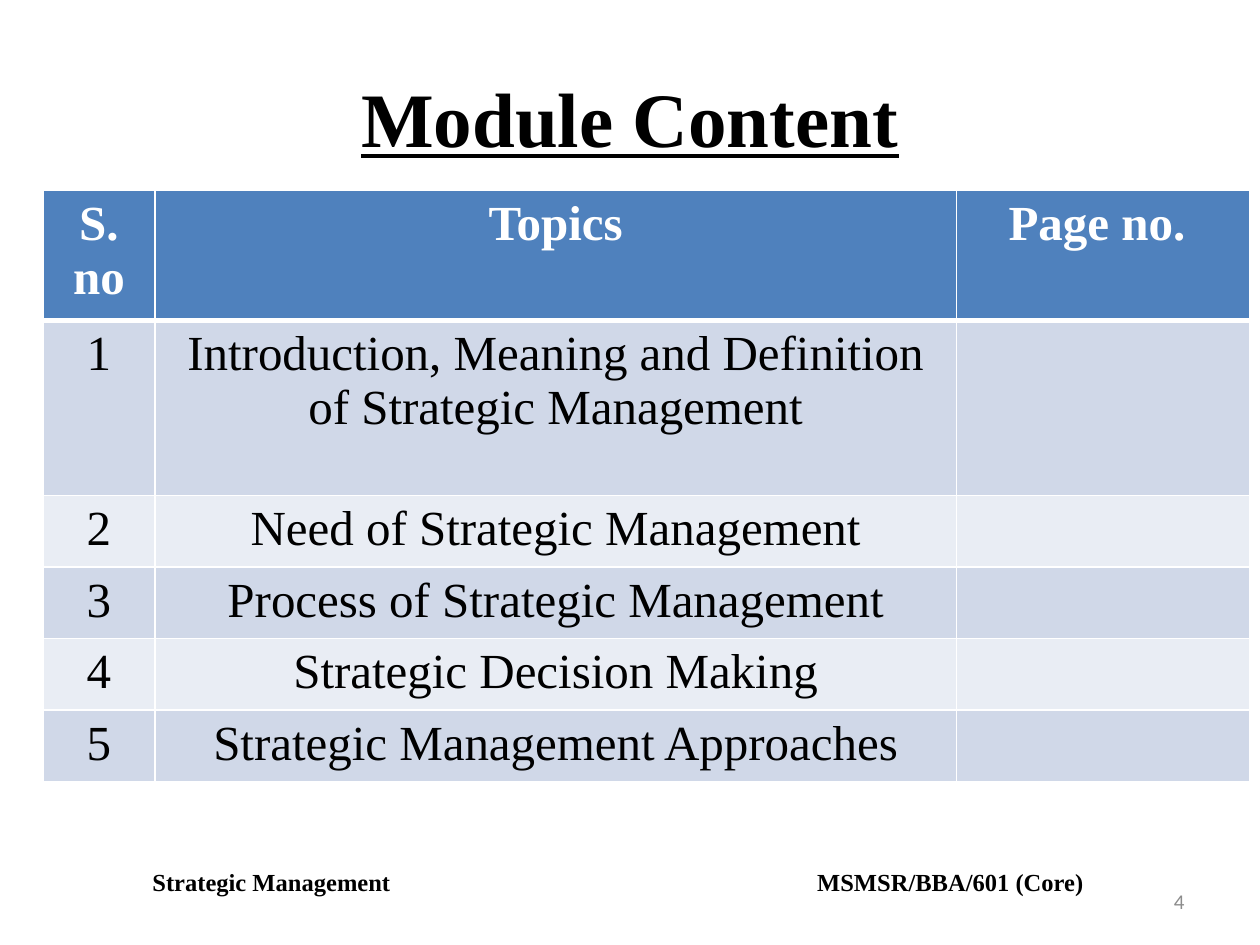
"""Build the module content slide: title, topics table, footer and page number."""
from lxml import etree
from pptx import Presentation, util as u
from pptx.dml.color import RGBColor
from pptx.enum import text
from pptx.oxml.ns import qn

COLORS = {"black": "000000", "white": "FFFFFF", "header": "4F81BD",
          "odd": "D0D8E8", "even": "E9EDF4", "grey": "8C8C8C"}
SERIF = "Times New Roman"
TOPICS = ["Introduction, Meaning and Definition of Strategic Management",
          "Need of Strategic Management",
          "Process of Strategic Management",
          "Strategic Decision Making",
          "Strategic Management Approaches"]
ROWS = [("S. no", "Topics", "Page no. ")]
ROWS += [(str(number), topic, "") for number, topic in enumerate(TOPICS, 1)]
WIDTHS = [0.89, 6.36, 2.33]
HEIGHTS = [0.95, 1.39] + [0.53] * 4
TITLE = {"size": u.Pt(44), "name": SERIF, "bold": True, "underline": True}
HEADER = {"size": u.Pt(28), "name": SERIF, "bold": True}
BODY = {**HEADER, "bold": False}
FOOTER = {"size": u.Pt(14), "name": SERIF, "bold": True}
NUMBER = {"size": u.Pt(12), "name": "Calibri"}


def write(frame, words, style, color, align):
    para = frame.paragraphs[0]
    para.alignment = align
    span = para.add_run()
    span.text = words
    for name, value in style.items():
        setattr(span.font, name, value)
    span.font.color.rgb = RGBColor.from_string(COLORS[color])
    return para


def add_text(page, place, words, style, color, align, anchor=text.MSO_ANCHOR.MIDDLE):
    frame = page.shapes.add_textbox(*map(u.Inches, place)).text_frame
    frame.word_wrap = True
    frame.vertical_anchor = anchor
    return frame, write(frame, words, style, color, align)


def add_borders(cell, widths):
    properties = cell._tc.get_or_add_tcPr()
    for side, points in zip("LRTB", widths):
        line = etree.SubElement(properties, qn(f"a:ln{side}"), w=str(u.Pt(points)))
        fill = etree.SubElement(line, qn("a:solidFill"))
        etree.SubElement(fill, qn("a:srgbClr"), val=COLORS["white"])


def add_topics(page):
    place = (0.34, 1.51, sum(WIDTHS), sum(HEIGHTS))
    table = page.shapes.add_table(len(ROWS), len(WIDTHS), *map(u.Inches, place)).table
    for column, width in zip(table.columns, WIDTHS):
        column.width = u.Inches(width)
    for r, (row, height) in enumerate(zip(ROWS, HEIGHTS)):
        table.rows[r].height = u.Inches(height)
        shade = "header" if r == 0 else "odd" if r % 2 else "even"
        style, color = (HEADER, "white") if r == 0 else (BODY, "black")
        for c, words in enumerate(row):
            cell = table.cell(r, c)
            add_borders(cell, (1, 1, 3 if r == 1 else 1, 3 if r == 0 else 1))
            cell.fill.solid()
            cell.fill.fore_color.rgb = RGBColor.from_string(COLORS[shade])
            if words:
                write(cell.text_frame, words, style, color, text.PP_ALIGN.CENTER)


def add_footer(page):
    frame, para = add_text(page, (0.42, 6.83, 9, 0.34),
                           "Strategic Management\tMSMSR/BBA/601 (Core)", FOOTER,
                           "black", text.PP_ALIGN.LEFT, text.MSO_ANCHOR.TOP)
    frame.margin_left = u.Inches(0.79)
    tabs = etree.SubElement(para._p.get_or_add_pPr(), qn("a:tabLst"))
    etree.SubElement(tabs, qn("a:tab"), pos=str(u.Inches(7.39)), algn="r")


def main():
    deck = Presentation()
    deck.slide_width, deck.slide_height = u.Inches(10), u.Inches(7.5)
    page = deck.slides.add_slide(deck.slide_layouts[6])
    add_text(page, (0.5, 0.3, 9, 1.25), "Module Content", TITLE, "black",
             text.PP_ALIGN.CENTER)
    add_topics(page)
    add_footer(page)
    add_text(page, (7.17, 6.95, 2.33, 0.4), "4", NUMBER, "grey", text.PP_ALIGN.RIGHT)
    deck.save("out.pptx")


if __name__ == "__main__":
    main()
